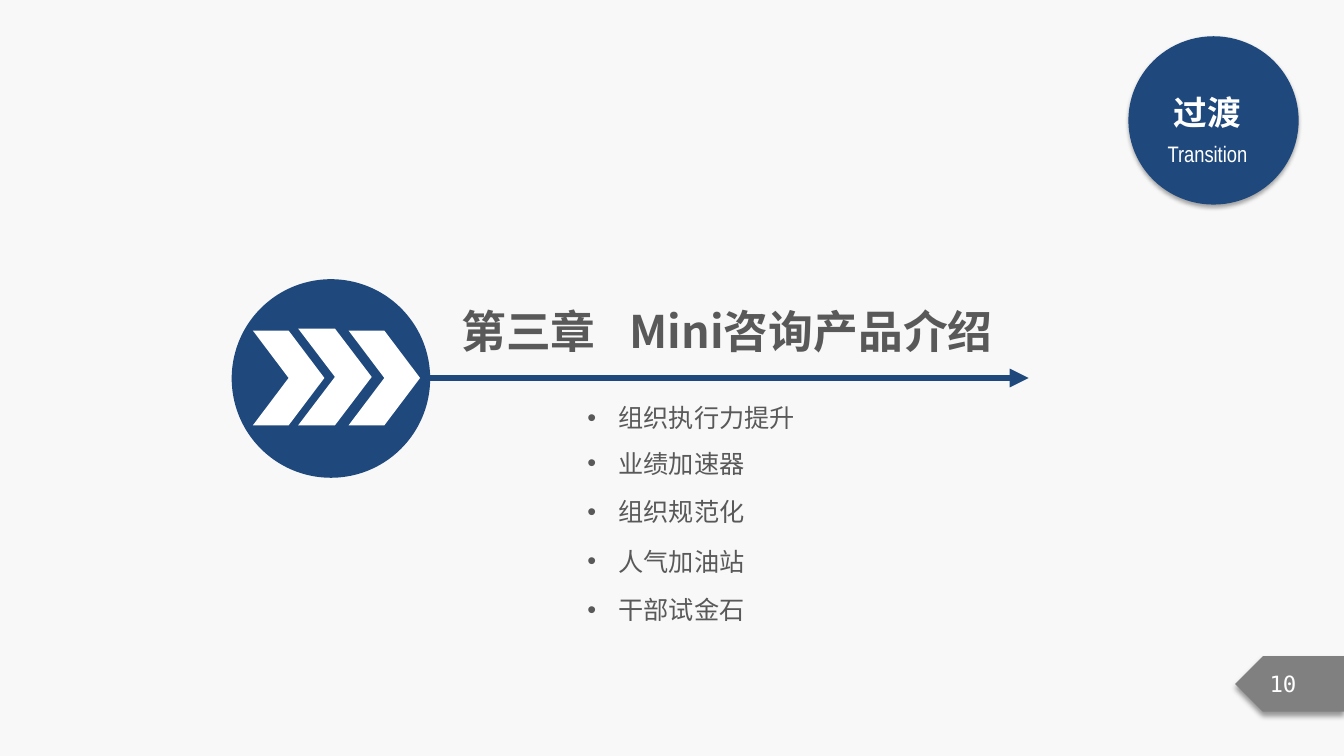
from lxml import etree
from pptx import Presentation
from pptx import util as u
from pptx.dml.color import RGBColor
from pptx.enum import shapes, text
from pptx.oxml.ns import qn

PX = 9144  # EMU per px, 100 px to the inch
COLORS = {"paper": "F8F8F8", "navy": "1F497D", "grey": "808080",
          "ink": "595959", "white": "FFFFFF", "black": "000000"}
CJK_FONT = "Noto Sans CJK SC"
TOPICS = ["组织执行力提升", "业绩加速器", "组织规范化", "人气加油站", "干部试金石"]
TOPIC_GAPS = [0, 11, 13, 14, 13]  # points before each topic


def color(name):
    return RGBColor.from_string(COLORS[name])


def place(shape, box):
    shape.left, shape.top, shape.width, shape.height = (n * PX for n in box)


def add_element(parent, tag, **attributes):
    values = {key: str(value) for key, value in attributes.items()}
    return etree.SubElement(parent, qn(tag), values)


def add_filled(slide, kind, box, fill):
    shape = slide.shapes.add_shape(kind, *(n * PX for n in box))
    shape.shadow.inherit = False
    shape.fill.solid()
    shape.fill.fore_color.rgb = color(fill)
    shape.line.fill.background()
    return shape


def add_shadow(shape, opacity, blur, distance):
    effects = shape._element.spPr.find(qn("a:effectLst"))
    shadow = add_element(effects, "a:outerShdw", blurRad=u.Pt(blur), dist=u.Pt(distance),
                         dir=90 * 60000, algn="t", rotWithShape=0)
    tint = add_element(shadow, "a:srgbClr", val=COLORS["black"])
    add_element(tint, "a:alpha", val=opacity * 1000)


def format_runs(paragraph, size, font, fill, bold=False):
    for run in paragraph.runs:
        run.font.size = u.Pt(size)
        run.font.bold = bold
        run.font.color.rgb = color(fill)
        run.font.name = font
        add_element(run._r.get_or_add_rPr(), "a:ea", typeface=CJK_FONT)


def set_frame(frame):
    frame.word_wrap = True
    frame.auto_size = text.MSO_AUTO_SIZE.NONE
    frame.vertical_anchor = text.MSO_ANCHOR.TOP


def add_label(slide, box, words, size, font, bold=False):
    label = slide.shapes.add_textbox(*(n * PX for n in box))
    set_frame(label.text_frame)
    label.text_frame.text = words
    paragraph = label.text_frame.paragraphs[0]
    paragraph.alignment = text.PP_ALIGN.CENTER
    format_runs(paragraph, size, font, "white", bold)


def badge(slide, x, y, width, height):
    """Round section badge with its name in two languages."""
    circle = add_filled(slide, shapes.MSO_SHAPE.OVAL, (x, y, width, height), "navy")
    add_shadow(circle, 35, 3.1, 1.8)
    add_label(slide, (x - 4, y + 50, width - 4, 50), "过渡", 24, "Calibri", True)
    add_label(slide, (x - 4, y + 98, width - 4, 37), "Transition", 16, "Arial Narrow")


def page_tag(slide, x, y, width, height):
    """Page number on a tag pointing left."""
    tag = add_filled(slide, shapes.MSO_SHAPE.PENTAGON, (x, y, width, height), "grey")
    tag._element.spPr.xfrm.set("flipH", "1")
    add_shadow(tag, 40, 4, 3)
    add_label(slide, (x + 12, y + 9, 71, 37), "10", 16, "DejaVu Sans Mono")


def chapter_marker(slide, x, y, diameter, arrow_length):
    """Circle with three chevrons and an arrow leading right."""
    middle = y + diameter // 2
    right = x + diameter
    arrow = slide.shapes.add_connector(
        shapes.MSO_CONNECTOR.STRAIGHT, right * PX, middle * PX,
        (right + arrow_length) * PX, middle * PX)
    arrow.line.color.rgb = color("navy")
    arrow.line.width = u.Pt(4.5)
    add_element(arrow.line._get_or_add_ln(), "a:tailEnd", type="triangle")
    add_element(arrow._element.spPr, "a:effectLst")

    add_filled(slide, shapes.MSO_SHAPE.OVAL, (x, y, diameter, diameter), "navy")
    # The middle chevron is slightly larger than its neighbours
    for offset, top, width, height in ((21, 51, 71, 94), (66, 49, 73, 96), (116, 51, 71, 94)):
        add_filled(slide, shapes.MSO_SHAPE.CHEVRON,
                   (x + offset, y + top, width, height), "white")


def chapter_title(slide, box):
    title = slide.shapes.title
    place(title, box)
    set_frame(title.text_frame)
    title.text_frame.text = "第三章\tMini咨询产品介绍"
    paragraph = title.text_frame.paragraphs[0]
    paragraph.alignment = text.PP_ALIGN.LEFT
    tabs = add_element(paragraph._p.get_or_add_pPr(), "a:tabLst")
    add_element(tabs, "a:tab", pos=167 * PX, algn="l")
    format_runs(paragraph, 32, CJK_FONT, "ink", True)


def topic_list(slide, box):
    body = slide.placeholders[1]
    place(body, box)
    frame = body.text_frame
    set_frame(frame)
    frame.text = "\n".join(TOPICS)
    for paragraph, gap in zip(frame.paragraphs, TOPIC_GAPS):
        paragraph.space_before = u.Pt(gap)
        properties = paragraph._p.get_or_add_pPr()
        properties.set("marL", str(31 * PX))
        properties.set("indent", str(-31 * PX))
        add_element(properties, "a:buFont", typeface="Arial")
        add_element(properties, "a:buChar", char="•")
        format_runs(paragraph, 18, CJK_FONT, "ink")


def main():
    presentation = Presentation()
    presentation.slide_width = 1334 * PX
    presentation.slide_height = 750 * PX
    slide = presentation.slides.add_slide(presentation.slide_layouts[1])
    slide.background.fill.solid()
    slide.background.fill.fore_color.rgb = color("paper")

    badge(slide, 1120, 36, 169, 167)
    page_tag(slide, 1226, 651, 108, 55)
    chapter_marker(slide, 230, 277, 197, 594)
    chapter_title(slide, (448, 296, 580, 63))
    topic_list(slide, (573, 394, 394, 256))
    presentation.save("out.pptx")


if __name__ == "__main__":
    main()
